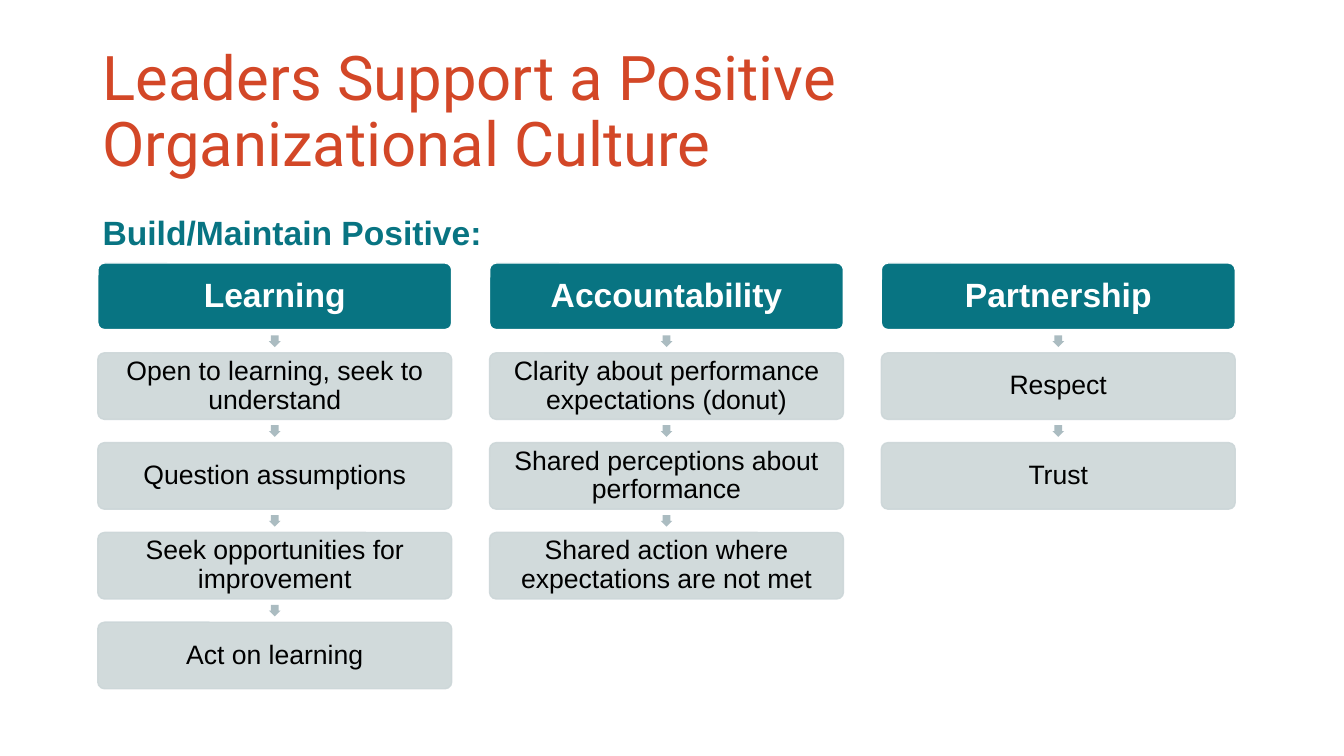
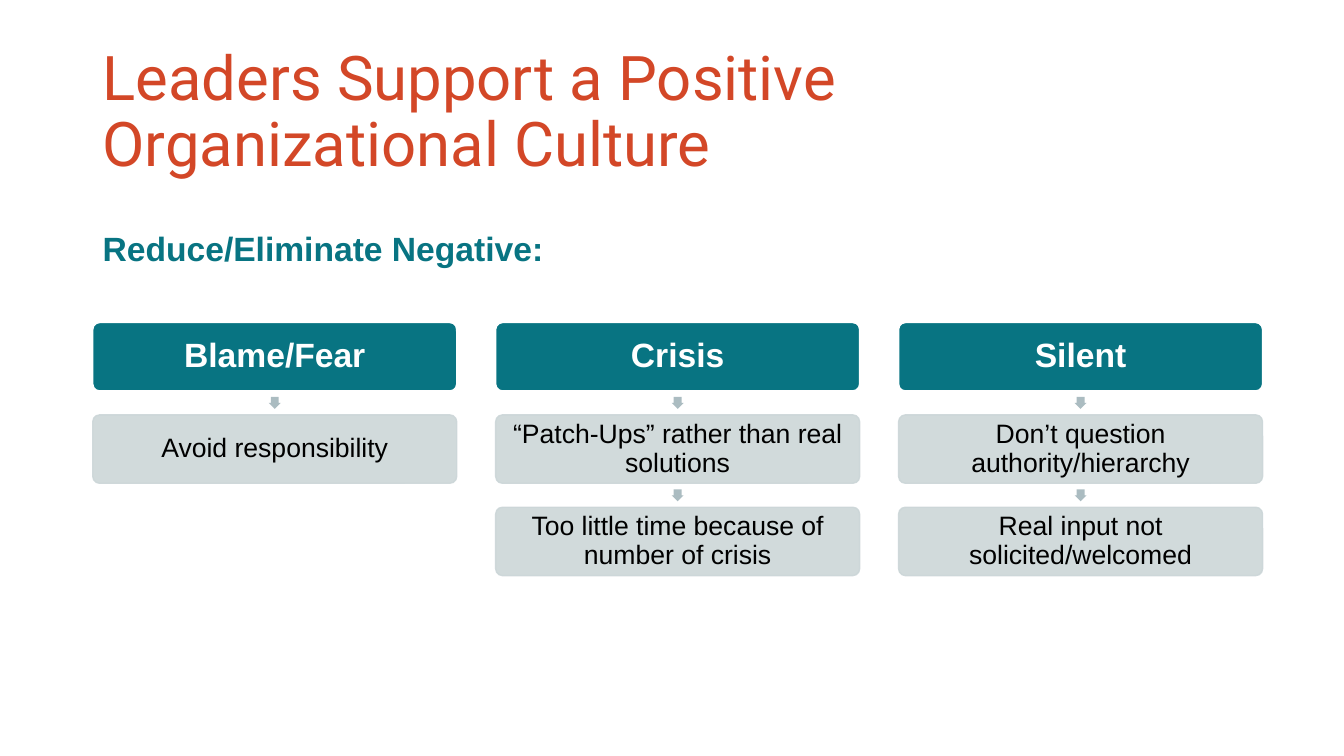
from pptx import Presentation
from pptx.dml.color import RGBColor
from pptx.enum.shapes import MSO_SHAPE
from pptx.enum.text import MSO_ANCHOR, PP_ALIGN
from pptx.oxml.ns import qn
from pptx.util import Inches, Pt
from lxml import etree

ROUND_RECT = MSO_SHAPE.ROUNDED_RECTANGLE
ARROW = MSO_SHAPE.RIGHT_ARROW
MIDDLE, TOP = MSO_ANCHOR.MIDDLE, MSO_ANCHOR.TOP
LEFT, CENTER = PP_ALIGN.LEFT, PP_ALIGN.CENTER

COLORS = {
    "title": "D34727",
    "teal": "087482",
    "step": "CCD6D8",
    "arrow": "ABBCC1",
    "white": "FFFFFF",
    "black": "000000",
}
TITLE = "Leaders Support a Positive Organizational Culture"

# Proportions of the flow columns
BOX_RATIO = 0.188      # box height / box width
COLUMN_RATIO = 1.107   # column pitch / box width
GAP_RATIO = 0.35       # gap between boxes / box height
ARROW_RATIO = 0.175    # arrow size / box height

SLIDES = [
    {
        "heading": "Build/Maintain Positive:",
        "heading_top": 2.01,
        "origin": (0.97, 2.61),
        "box_width": 3.51,
        "columns": [
            ("Learning", ["Open to learning, seek to understand",
                          "Question assumptions",
                          "Seek opportunities for improvement",
                          "Act on learning"]),
            ("Accountability", ["Clarity about performance expectations (donut)",
                                "Shared perceptions about performance",
                                "Shared action where expectations are not met"]),
            ("Partnership", ["Respect", "Trust"]),
        ],
    },
    {
        "heading": "Reduce/Eliminate Negative:",
        "heading_top": 2.17,
        "origin": (0.92, 3.2),
        "box_width": 3.61,
        "columns": [
            ("Blame/Fear", ["Avoid responsibility"]),
            ("Crisis", ["“Patch-Ups” rather than real solutions",
                        "Too little time because of number of crisis"]),
            ("Silent", ["Don’t question authority/hierarchy",
                        "Real input not solicited/welcomed"]),
        ],
    },
]


def rgb(name):
    return RGBColor.from_string(COLORS[name])


def write(sp, text, size, color, font="Arial", bold=False, align=LEFT,
          anchor=TOP, spacing=0.9):
    tf = sp.text_frame
    tf.word_wrap = True
    tf.vertical_anchor = anchor
    p = tf.paragraphs[0]
    p.text = text
    p.alignment = align
    p.line_spacing = spacing
    p.font.name = font
    p.font.size = Pt(size)
    p.font.bold = bold
    p.font.color.rgb = rgb(color)


def add_text(s, x, y, w, h, text, size, color, **style):
    sp = s.shapes.add_textbox(Inches(x), Inches(y), Inches(w), Inches(h))
    write(sp, text, size, color, **style)


def add_filled(s, kind, x, y, w, h, fill, line=None):
    sp = s.shapes.add_shape(kind, Inches(x), Inches(y), Inches(w), Inches(h))
    sp.shadow.inherit = False
    sp.fill.solid()
    sp.fill.fore_color.rgb = rgb(fill)
    if line:
        sp.line.color.rgb = rgb(line)
        sp.line.width = Pt(1)
    else:
        sp.line.fill.background()
    return sp


def set_opacity(sp, percent):
    """Apply one opacity to the fill and the outline."""
    for clr in sp._element.spPr.iter(qn("a:srgbClr")):
        etree.SubElement(clr, qn("a:alpha")).set("val", str(percent * 1000))


def add_box(s, x, y, w, h, text, header):
    fill, line = ("teal", "white") if header else ("step", "step")
    sp = add_filled(s, ROUND_RECT, x, y, w, h, fill, line)
    sp.adjustments[0] = 0.1
    tf = sp.text_frame
    tf.margin_left = tf.margin_right = Inches(0.05)
    tf.margin_top = tf.margin_bottom = Inches(0.05)
    if header:
        write(sp, text, 24, "white", bold=True, align=CENTER, anchor=MIDDLE)
    else:
        set_opacity(sp, 90)
        write(sp, text, 19, "black", align=CENTER, anchor=MIDDLE)


def add_arrow(s, center_x, center_y, size):
    sp = add_filled(s, ARROW, center_x - size / 2, center_y - size / 2,
                    size, size, "arrow")
    sp.rotation = 90
    sp.adjustments[0] = 0.667
    sp.adjustments[1] = 0.5


def add_column(s, x, y, w, header, steps):
    """A header box with its steps below, joined by small arrows."""
    h = w * BOX_RATIO
    gap = h * GAP_RATIO
    add_box(s, x, y, w, h, header, True)
    for i, step in enumerate(steps, 1):
        top = y + i * (h + gap)
        add_arrow(s, x + w / 2, top - gap / 2, h * ARROW_RATIO)
        add_box(s, x, top, w, h, step, False)


def add_culture_slide(prs, content):
    s = prs.slides.add_slide(prs.slide_layouts[6])
    # Title and heading
    add_text(s, 0.92, 0.4, 11.5, 1.45, TITLE, 44, "title",
             font="Roboto", anchor=MIDDLE)
    add_text(s, 0.92, content["heading_top"], 11.87, 0.51, content["heading"],
             24, "teal", bold=True, spacing=1.1)
    # Flow columns
    x, y = content["origin"]
    w = content["box_width"]
    for i, (header, steps) in enumerate(content["columns"]):
        add_column(s, x + i * w * COLUMN_RATIO, y, w, header, steps)


def main():
    prs = Presentation()
    prs.slide_width = Inches(13.33)
    prs.slide_height = Inches(7.5)
    for content in SLIDES:
        add_culture_slide(prs, content)
    prs.save("out.pptx")


if __name__ == "__main__":
    main()
